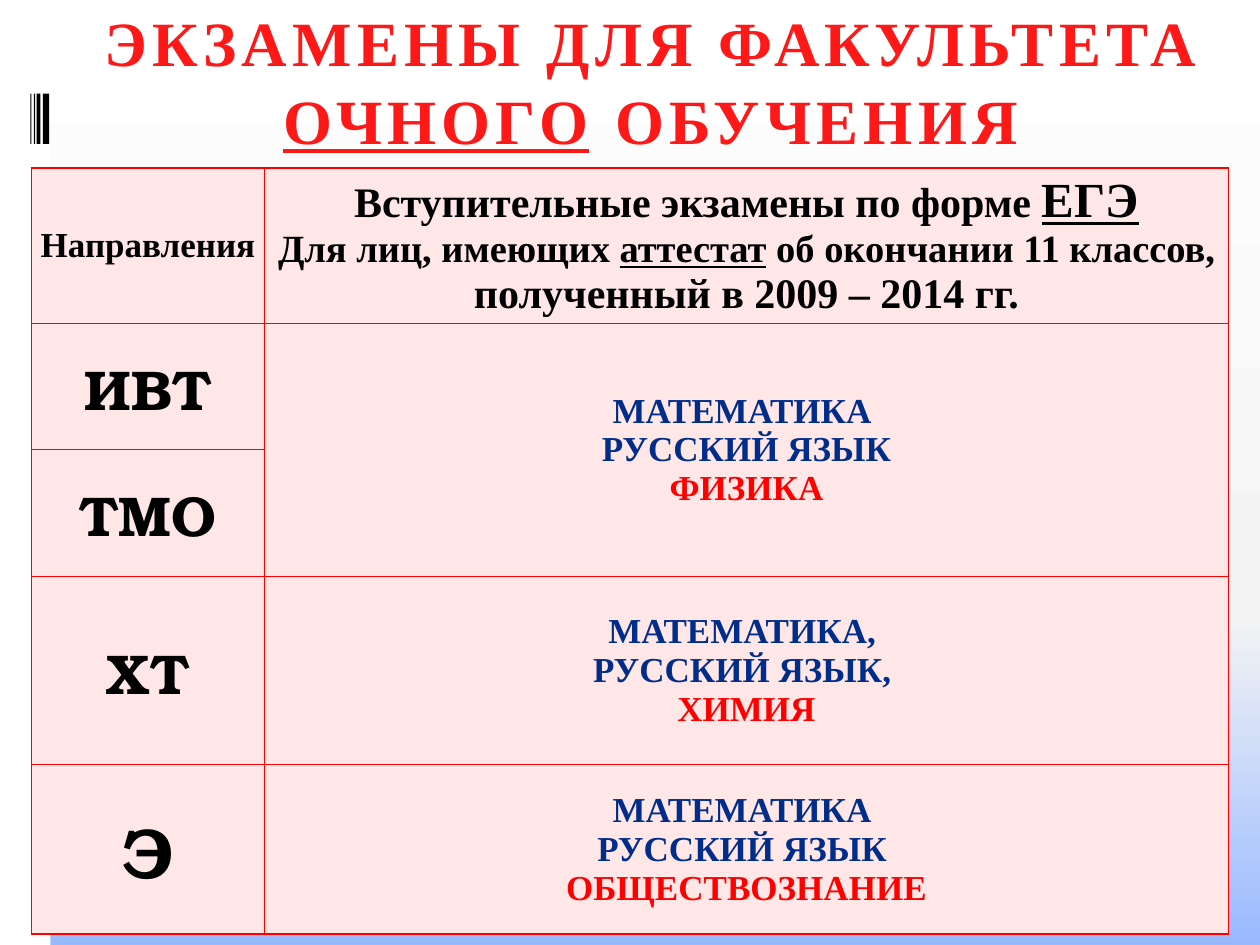
from lxml import etree
from pptx import Presentation
from pptx.dml.color import RGBColor
from pptx.enum.shapes import MSO_SHAPE as SHAPE
from pptx.enum.text import MSO_ANCHOR as ANCHOR, PP_ALIGN as ALIGN
from pptx.oxml import parse_xml
from pptx.oxml.ns import nsdecls
from pptx.util import Pt

SERIF, SLAB = "Times New Roman", "TeX Gyre Bonum"
BLACK, WHITE, RED, BLUE, PINK = "000000", "FFFFFF", "FF0000", "002D89", "FFE7E7"
TITLE_RED = "FF1818"

# Content: a paragraph is a list of runs (text, size, colour, font, underlined)
TITLE = [
    [("ЭКЗАМЕНЫ ДЛЯ ФАКУЛЬТЕТА", 36, TITLE_RED, SERIF, False)],
    [("ОЧНОГО", 36, TITLE_RED, SERIF, True),
     (" ОБУЧЕНИЯ", 36, TITLE_RED, SERIF, False)],
]
HEADER = [
    [[("Направления", 20, BLACK, SERIF, False)]],
    [[("Вступительные экзамены по форме ", 24, BLACK, SERIF, False),
      ("ЕГЭ", 28, BLACK, SERIF, True)],
     [("Для лиц, имеющих ", 22, BLACK, SERIF, False),
      ("аттестат", 22, BLACK, SERIF, True),
      (" об окончании 11 классов, ", 22, BLACK, SERIF, False),
      ("полученный в 2009 – 2014 гг.", 24, BLACK, SERIF, False)]],
]
# Programme, size, exams (None: shared with the row above)
PROGRAMMES = [
    ("ИВТ", 32, ["МАТЕМАТИКА ", "РУССКИЙ ЯЗЫК", "ФИЗИКА"]),
    ("ТМО", 32, None),
    ("ХТ", 32, ["МАТЕМАТИКА, ", "РУССКИЙ ЯЗЫК, ", "ХИМИЯ"]),
    ("Э", 40, ["МАТЕМАТИКА ", "РУССКИЙ ЯЗЫК ", "ОБЩЕСТВОЗНАНИЕ"]),
]
COLS = [133.2, 550.8]
ROWS = [86.4, 72, 72.7, 107.3, 97]
BARS = [(17.3, 0.7), (19.4, 0.7), (20.9, 2.2), (24.5, 3.6)]  # left, width
BACKGROUND = [(0, WHITE), (65, "F4F4F4"), (100, "99B9FF")]


def rgb(value):
    return RGBColor.from_string(value)


def add_rect(left, top, width, height, color):
    sp = s.shapes.add_shape(SHAPE.RECTANGLE, Pt(left), Pt(top), Pt(width), Pt(height))
    sp.shadow.inherit = False
    sp.fill.solid()
    sp.fill.fore_color.rgb = rgb(color)
    sp.line.fill.background()


def write(tf, paragraphs):
    for i, runs in enumerate(paragraphs):
        p = tf.add_paragraph() if i else tf.paragraphs[0]
        p.alignment = ALIGN.CENTER
        for text, size, color, font, underlined in runs:
            r = p.add_run()
            r.text = text
            r.font.size, r.font.name = Pt(size), font
            r.font.bold, r.font.underline = True, underlined
            r.font.color.rgb = rgb(color)


def fill_cell(cell, paragraphs):
    cell.margin_left = cell.margin_right = cell.margin_top = cell.margin_bottom = 0
    cell.vertical_anchor = ANCHOR.MIDDLE
    write(cell.text_frame, paragraphs)


def style_cell(cell):
    tc_pr = cell._tc.get_or_add_tcPr()
    for side in ("lnL", "lnR", "lnT", "lnB"):
        tc_pr.append(parse_xml(
            f'<a:{side} {nsdecls("a")} w="{Pt(1)}"><a:solidFill>'
            f'<a:srgbClr val="{RED}"/></a:solidFill></a:{side}>'))
    cell.fill.solid()
    cell.fill.fore_color.rgb = rgb(PINK)


prs = Presentation()
prs.slide_width, prs.slide_height = Pt(720), Pt(540)
s = prs.slides.add_slide(prs.slide_layouts[6])

# Background gradient, top to bottom
fill = s.background.fill
fill.gradient()
fill.gradient_angle = 270
stops = s.background._cSld.find(".//{*}gsLst")
for stop in list(stops):
    stops.remove(stop)
for position, color in BACKGROUND:
    stops.append(parse_xml(
        f'<a:gs {nsdecls("a")} pos="{position * 1000}"><a:srgbClr val="{color}"/></a:gs>'))

# Left strip and bars
add_rect(0, 0, 28.8, 540, WHITE)
for left, width in BARS:
    add_rect(left, 53.5, width, 28.8, BLACK)

# Title
tf = s.shapes.add_textbox(Pt(12), 0, Pt(720), Pt(90)).text_frame
tf.word_wrap = True
tf.vertical_anchor = ANCHOR.MIDDLE
write(tf, TITLE)
for p in tf.paragraphs:
    p.line_spacing = 1.03
    for r in p.runs:
        r.font._element.set("spc", "300")

# Exam table
table = s.shapes.add_table(len(ROWS), len(COLS), Pt(18), Pt(96),
                           Pt(sum(COLS)), Pt(sum(ROWS))).table
for column, width in zip(table.columns, COLS):
    column.width = Pt(width)
for row, height in zip(table.rows, ROWS):
    row.height = Pt(height)
for cell in table.iter_cells():
    style_cell(cell)
table.cell(1, 1).merge(table.cell(2, 1))

for col, paragraphs in enumerate(HEADER):
    fill_cell(table.cell(0, col), paragraphs)
for row, (name, size, exams) in enumerate(PROGRAMMES, 1):
    fill_cell(table.cell(row, 0), [[(name, size, BLACK, SLAB, False)]])
    if exams:
        colors = [BLUE, BLUE, RED]
        fill_cell(table.cell(row, 1), [[(exam, 20, color, SERIF, False)]
                                       for exam, color in zip(exams, colors)])

prs.save("out.pptx")
